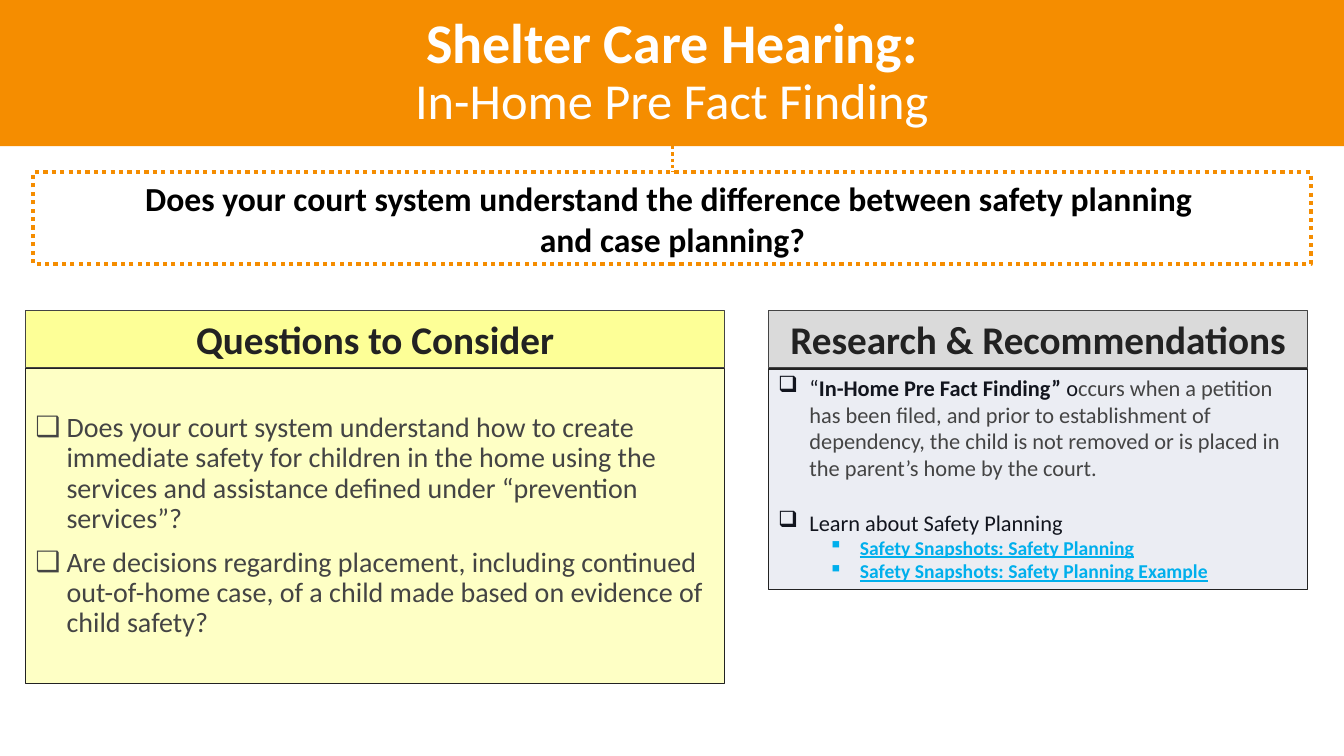
from dataclasses import dataclass

from lxml.etree import SubElement
from pptx import Presentation
from pptx.dml.color import RGBColor
from pptx.enum.dml import MSO_LINE
from pptx.enum.shapes import MSO_CONNECTOR, MSO_SHAPE
from pptx.enum.text import MSO_ANCHOR, MSO_AUTO_SIZE, PP_ALIGN
from pptx.oxml.ns import qn
from pptx.util import Inches, Pt


@dataclass(frozen=True)
class Theme:
    font: str = "Calibri"
    orange: str = "F58D00"
    white: str = "FFFFFF"
    black: str = "000000"
    ink: str = "222222"
    gray: str = "444444"
    navy: str = "12151E"
    link: str = "00AFEC"
    yellow: str = "FDFF97"
    pale_yellow: str = "FEFFC5"
    silver: str = "DADADA"
    pale_blue: str = "EBEDF3"
    title_size: int = 40
    subtitle_size: int = 36
    heading_size: int = 28
    prompt_size: int = 24
    question_size: int = 20
    note_size: int = 16
    link_size: int = 14


class SlideBuilder:
    def __init__(self, presentation, theme):
        self.theme = theme
        self.slide = presentation.slides.add_slide(presentation.slide_layouts[1])

    def place(self, shape, box):
        shape.left, shape.top, shape.width, shape.height = map(Inches, box)

    def style(self, shape, fill=None, line=None, width=0.75, dash=None):
        if fill:
            shape.fill.solid()
            shape.fill.fore_color.rgb = RGBColor.from_string(fill)
        else:
            shape.fill.background()
        if line:
            self.style_line(shape.line, line, width, dash)
        else:
            shape.line.fill.background()

    def style_line(self, line, color, width, dash=None):
        line.color.rgb = RGBColor.from_string(color)
        line.width = Pt(width)
        if dash:
            line.dash_style = dash

    def frame(self, shape, anchor):
        text_frame = shape.text_frame
        text_frame.word_wrap = True
        text_frame.auto_size = MSO_AUTO_SIZE.NONE
        text_frame.vertical_anchor = anchor

    def rectangle(self, box, anchor=MSO_ANCHOR.TOP, **look):
        shape = self.slide.shapes.add_shape(MSO_SHAPE.RECTANGLE, *map(Inches, box))
        shape.shadow.inherit = False
        self.style(shape, **look)
        self.frame(shape, anchor)
        return shape

    def text_box(self, box):
        shape = self.slide.shapes.add_textbox(*map(Inches, box))
        self.frame(shape, MSO_ANCHOR.TOP)
        return shape

    def placeholder(self, index, box, **look):
        shape = self.slide.placeholders[index]
        self.place(shape, box)
        self.style(shape, **look)
        self.frame(shape, MSO_ANCHOR.MIDDLE)
        return shape

    def connector(self, start, end, color, width):
        line = self.slide.shapes.add_connector(
            MSO_CONNECTOR.STRAIGHT, *map(Inches, start + end))
        self.style_line(line.line, color, width, MSO_LINE.ROUND_DOT)
        SubElement(line._element.spPr, qn("a:effectLst"))

    def paragraph(self, shape, text, size, color, bold=False, underline=None,
                  align=PP_ALIGN.LEFT, bullet=None, indent=0.31, level=0,
                  before=0, spacing=1.0):
        text_frame = shape.text_frame
        paragraph = text_frame.paragraphs[0]
        if paragraph.runs:
            paragraph = text_frame.add_paragraph()
        if bullet:
            properties = paragraph._p.get_or_add_pPr()
            properties.set("marL", str(Inches(indent)))
            properties.set("indent", str(-Inches(0.31)))
            SubElement(properties, qn("a:buChar")).set("char", bullet)
        paragraph.level = level
        paragraph.alignment = align
        paragraph.space_before = Pt(before)
        paragraph.line_spacing = spacing
        font = paragraph.font
        font.name, font.size = self.theme.font, Pt(size)
        font.bold, font.underline = bold, underline
        font.color.rgb = RGBColor.from_string(color)
        if text:
            paragraph.add_run().text = text
        return paragraph

    def run(self, paragraph, text, color=None, size=None, bold=None):
        run = paragraph.add_run()
        run.text = text
        run.font.bold = bold
        if size:
            run.font.size = Pt(size)
        if color:
            run.font.color.rgb = RGBColor.from_string(color)

    def heading(self, box, text, fill):
        shape = self.rectangle(box, fill=fill, line=self.theme.gray)
        self.paragraph(shape, text, self.theme.heading_size, self.theme.ink,
                       bold=True, align=PP_ALIGN.CENTER)


def build_slide(presentation, theme):
    builder = SlideBuilder(presentation, theme)
    left, right = (0.25, 6.94), (7.62, 5.35)
    heading_top, heading_height = 3.08, 0.57
    panel_top = 3.66

    title = builder.placeholder(0, (0, 0, 13.33, 1.45), fill=theme.orange)
    paragraph = builder.paragraph(title, "", theme.title_size, theme.white,
                                  align=PP_ALIGN.CENTER, spacing=0.9)
    builder.run(paragraph, "Shelter Care Hearing:", bold=True)
    paragraph.add_line_break()
    builder.run(paragraph, "In-Home Pre Fact Finding", size=theme.subtitle_size)

    questions = builder.placeholder(1, (left[0], panel_top, left[1], 3.12),
                                    fill=theme.pale_yellow, line=theme.ink)
    for question in (
        "Does your court system understand how to create immediate safety for children in the home "
        "using the services and assistance defined under “prevention services”?",
        "Are decisions regarding placement, including continued out-of-home case, of a child made "
        "based on evidence of child safety?",
    ):
        builder.paragraph(questions, question, theme.question_size, theme.gray,
                          bullet="❑", before=10, spacing=0.9)

    research = builder.rectangle((right[0], panel_top, right[1], 2.19),
                                 fill=theme.pale_blue, line=theme.ink, width=1)
    paragraph = builder.paragraph(research, "“", theme.note_size, theme.navy, bullet="❑")
    builder.run(paragraph, "In-Home Pre Fact Finding” ", bold=True)
    builder.run(paragraph, "o")
    builder.run(paragraph, "ccurs when a petition has been filed, and prior to establishment of "
                "dependency, the child is not removed or is placed in the parent’s home by the "
                "court.", color=theme.gray)
    builder.paragraph(research, "Learn about Safety Planning", theme.note_size,
                      theme.navy, bullet="❑", before=19.5)
    for topic in ("Safety Planning", "Safety Planning Example"):
        builder.paragraph(research, f"Safety Snapshots: {topic}", theme.link_size,
                          theme.link, bold=True, underline=True, bullet="▪",
                          indent=0.81, level=1)

    builder.heading((right[0], heading_top, right[1], heading_height),
                    "Research & Recommendations", theme.silver)
    builder.heading((left[0], heading_top, left[1], heading_height),
                    "Questions to Consider", theme.yellow)

    prompt = builder.text_box((0.46, 1.72, 12.42, 0.91))
    for line in ("Does your court system understand the difference between safety planning ",
                 "and case planning?"):
        builder.paragraph(prompt, line, theme.prompt_size, theme.black,
                          bold=True, align=PP_ALIGN.CENTER)
    builder.rectangle((0.33, 1.71, 12.67, 0.91), line=theme.orange, width=3,
                      dash=MSO_LINE.ROUND_DOT)
    builder.connector((6.67, 1.45), (6.67, 1.71), theme.orange, 2.25)


def main():
    presentation = Presentation()
    presentation.slide_width, presentation.slide_height = Inches(13.33), Inches(7.5)
    build_slide(presentation, Theme())
    presentation.save("out.pptx")


if __name__ == "__main__":
    main()
